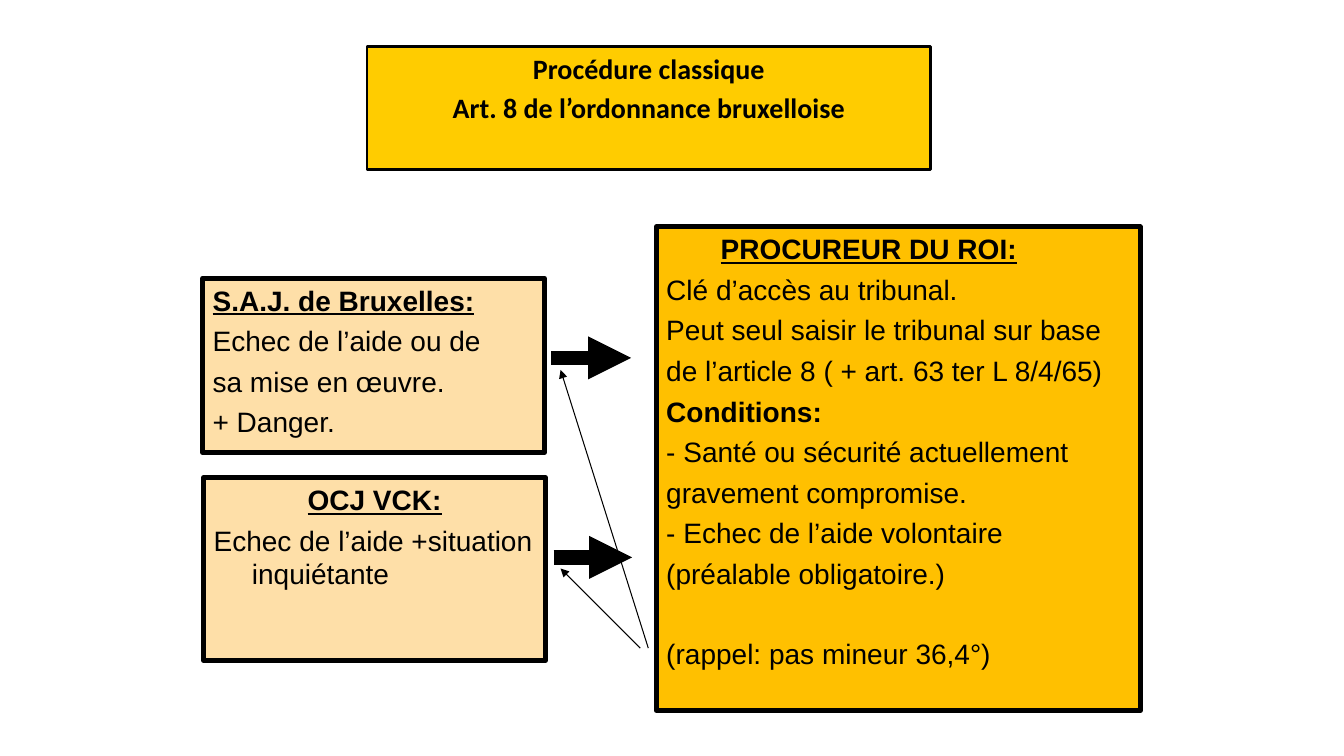
from dataclasses import dataclass

from pptx import Presentation
from pptx.dml.color import RGBColor
from pptx.enum.shapes import MSO_CONNECTOR, MSO_SHAPE
from pptx.enum.text import MSO_ANCHOR, PP_ALIGN
from pptx.oxml.ns import qn
from pptx.util import Inches, Pt
from lxml.etree import SubElement


@dataclass(frozen=True)
class Theme:
    black: RGBColor = RGBColor(0x00, 0x00, 0x00)
    title_fill: RGBColor = RGBColor(0xFF, 0xCC, 0x00)
    sender_fill: RGBColor = RGBColor(0xFE, 0xDF, 0xA8)
    prosecutor_fill: RGBColor = RGBColor(0xFF, 0xC0, 0x00)
    body_font: str = "Arial"
    title_font: str = "Calibri"
    text_size: Pt = Pt(20)
    body_gap: Pt = Pt(5)
    title_gap: Pt = Pt(4)
    reminder_gap: Pt = Pt(33)


theme = Theme()


def add_box(page, place, fill, border, lines, bold=(), underlined=(), centred=(),
            font=theme.body_font, gap=theme.body_gap):
    box = page.shapes.add_shape(MSO_SHAPE.RECTANGLE, *map(Inches, place))
    box.shadow.inherit = False
    box.fill.solid()
    box.fill.fore_color.rgb = fill
    box.line.color.rgb = theme.black
    box.line.width = Pt(border)
    frame = box.text_frame
    frame.word_wrap = True
    frame.vertical_anchor = MSO_ANCHOR.TOP
    frame.text = "\n".join(lines)
    for number, para in enumerate(frame.paragraphs):
        para.alignment = PP_ALIGN.CENTER if number in centred else PP_ALIGN.LEFT
        para.space_before = gap
        properties = para._p.get_or_add_pPr()
        properties.set("marL", str(Inches(0.38)))
        properties.set("indent", str(Inches(-0.38)))
        for span in para.runs:
            span.font.name = font
            span.font.size = theme.text_size
            span.font.color.rgb = theme.black
            span.font.bold = number in bold
            span.font.underline = number in underlined
    return box


def add_arrow(page, start, end, width):
    arrow = page.shapes.add_connector(MSO_CONNECTOR.STRAIGHT, *map(Inches, start + end))
    arrow.line.color.rgb = theme.black
    arrow.line.width = Pt(width)
    SubElement(arrow.line._get_or_add_ln(), qn("a:tailEnd"), type="triangle")
    SubElement(arrow._element.spPr, qn("a:effectLst"))


deck = Presentation()
deck.slide_width = Inches(13.33)
deck.slide_height = Inches(7.5)
page = deck.slides.add_slide(deck.slide_layouts[6])

add_box(page, (3.64, 0.46, 5.59, 1.22), theme.title_fill, 2,
        ["Procédure classique", "Art. 8 de l’ordonnance bruxelloise"],
        bold=(0, 1), centred=(0, 1), font=theme.title_font, gap=theme.title_gap)

add_box(page, (2.01, 2.76, 3.39, 1.73), theme.sender_fill, 3.5,
        ["S.A.J. de Bruxelles:", "Echec de l’aide ou de", "sa mise en œuvre.", "+ Danger."],
        bold=(0,), underlined=(0,))

add_box(page, (2.02, 4.74, 3.39, 1.81), theme.sender_fill, 3.75,
        ["OCJ VCK:", "Echec de l’aide +situation inquiétante"],
        bold=(0,), underlined=(0,), centred=(0,))

prosecutor = add_box(page, (6.51, 2.25, 4.8, 4.8), theme.prosecutor_fill, 3.5, [
    "PROCUREUR DU ROI:",
    "Clé d’accès au tribunal.",
    "Peut seul saisir le tribunal sur base",
    "de l’article 8 ( + art. 63 ter L 8/4/65)",
    "Conditions:",
    "- Santé ou sécurité actuellement",
    "gravement compromise.",
    "- Echec de l’aide volontaire",
    "(préalable obligatoire.)",
    "(rappel: pas mineur 36,4°)",
], bold=(0, 4), underlined=(0,))
heading, *_, reminder = prosecutor.text_frame.paragraphs
heading._p.pPr.set("marL", str(Inches(0.54)))
heading._p.pPr.set("indent", "0")
reminder.space_before = theme.reminder_gap

for start, end, width in [
    ((5.47, 3.55), (6.26, 3.55), 10.25),
    ((5.49, 5.53), (6.27, 5.53), 10.25),
    ((6.35, 6.43), (5.56, 5.64), 0.75),
    ((6.43, 6.43), (5.56, 3.67), 0.75),
]:
    add_arrow(page, start, end, width)

deck.save("out.pptx")
